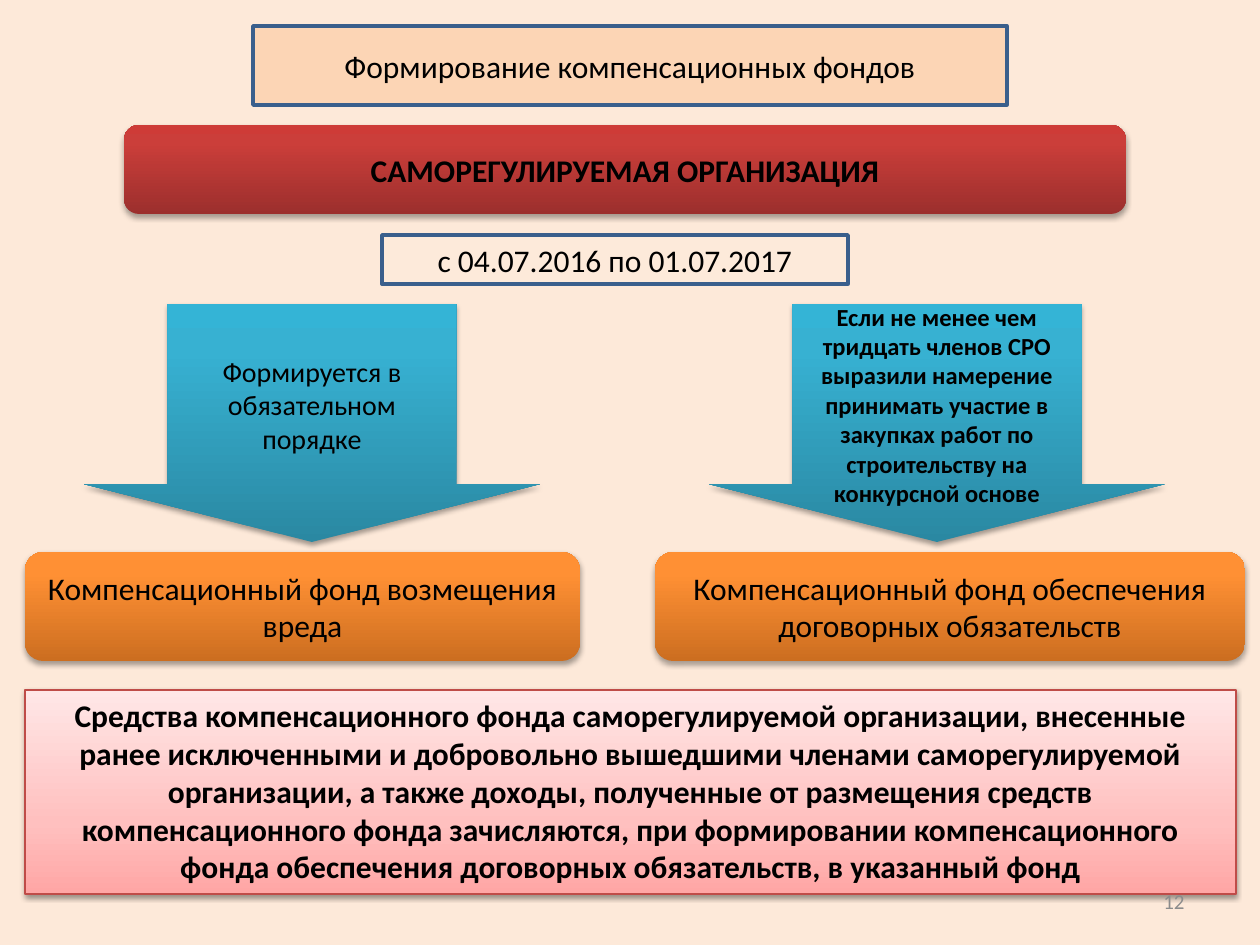
"""Build the slide on how compensation funds are formed."""
from copy import deepcopy
from dataclasses import dataclass
from typing import Optional

from lxml.etree import SubElement
from pptx import Presentation
from pptx.dml.color import RGBColor
from pptx.enum.shapes import MSO_SHAPE
from pptx.enum.text import MSO_ANCHOR, MSO_AUTO_SIZE, PP_ALIGN
from pptx.oxml.ns import qn
from pptx.util import Emu, Pt

Stops = tuple[tuple[int, str], ...]


@dataclass(frozen=True)
class Theme:
    font: str = "Calibri"
    background: str = "FDE9D9"
    text: str = "000000"
    muted: str = "8C8C8C"
    frame: str = "3A5F8C"
    title_fill: str = "FCD5B5"
    period_fill: str = "FDEADA"
    note_line: str = "BF4C48"
    red: Stops = ((0, "9C2F2D"), (80, "CB3E3A"), (100, "CE3B37"))
    teal: Stops = ((0, "2A88A2"), (80, "37B1D2"), (100, "34B4D6"))
    orange: Stops = ((0, "CC6E20"), (80, "FF9034"), (100, "FF9136"))
    pink: Stops = ((0, "FFA6A5"), (35, "FFC0BF"), (100, "FFE7E7"))
    body: int = 18
    arrow: int = 16
    condition: int = 14
    number: int = 12


@dataclass(frozen=True)
class Shadow:
    alpha: int = 35
    blur: float = 3.1
    distance: float = 1.8


@dataclass(frozen=True)
class Block:
    text: str
    box: tuple[int, int, int, int]
    fill: str | Stops
    kind: MSO_SHAPE = MSO_SHAPE.RECTANGLE
    size: int = Theme.body
    bold: bool = False
    line: Optional[str] = None
    line_width: float = 2
    shadow: Optional[Shadow] = None
    adjustments: tuple[float, ...] = ()
    grows: bool = False


THEME = Theme()
ARROW_ADJ = (0.633, 0.243)
ROUND, ARROW = MSO_SHAPE.ROUNDED_RECTANGLE, MSO_SHAPE.DOWN_ARROW

BLOCKS = (
    Block("с 04.07.2016 по 01.07.2017", (382, 235, 466, 49), THEME.period_fill,
          MSO_SHAPE.PENTAGON, line=THEME.frame, adjustments=(0,)),
    Block("Формирование компенсационных фондов", (253, 26, 754, 79),
          THEME.title_fill, line=THEME.frame),
    Block("Компенсационный фонд возмещения вреда", (25, 552, 555, 109),
          THEME.orange, ROUND, shadow=Shadow()),
    Block("Компенсационный фонд обеспечения договорных обязательств",
          (655, 552, 590, 109), THEME.orange, ROUND, shadow=Shadow()),
    Block("САМОРЕГУЛИРУЕМАЯ ОРГАНИЗАЦИЯ", (124, 125, 1002, 89), THEME.red,
          ROUND, bold=True, shadow=Shadow()),
    Block("Формируется в обязательном порядке", (84, 304, 456, 238),
          THEME.teal, ARROW, THEME.arrow, shadow=Shadow(),
          adjustments=ARROW_ADJ),
    Block("Средства компенсационного фонда саморегулируемой организации, "
          "внесенные ранее исключенными и добровольно вышедшими членами "
          "саморегулируемой организации, а также доходы, полученные от "
          "размещения средств компенсационного фонда зачисляются, при "
          "формировании компенсационного фонда обеспечения договорных "
          "обязательств, в указанный фонд", (25, 690, 1211, 204), THEME.pink,
          bold=True, line=THEME.note_line, line_width=0.75,
          shadow=Shadow(38, 3.1, 1.6), grows=True),
    Block("Если не менее чем тридцать членов СРО выразили намерение принимать "
          "участие в закупках работ по строительству на конкурсной основе",
          (709, 304, 456, 238), THEME.teal, ARROW, THEME.condition, bold=True,
          shadow=Shadow(), adjustments=ARROW_ADJ),
)


def px(value: int) -> Emu:
    """Turn pixels into EMU."""
    return Emu(round(value * 914400 / 126))


def rgb(value: str) -> RGBColor:
    """Turn a hex string into a colour."""
    return RGBColor.from_string(value)


def set_gradient(sp, stops: Stops) -> None:
    """Fill a shape with a gradient that runs from bottom to top."""
    sp.fill.gradient()
    sp.fill.gradient_angle = 90
    stop_list = sp._element.spPr.find(f".//{qn('a:gsLst')}")
    while len(stop_list) < len(stops):
        stop_list.append(deepcopy(stop_list[-1]))
    for stop, (position, color) in zip(sp.fill.gradient_stops, stops):
        stop.position = position / 100
        stop.color.rgb = rgb(color)


def set_shadow(sp, shadow: Shadow) -> None:
    """Give a shape a soft shadow that falls downwards."""
    effects = sp._element.spPr.find(qn("a:effectLst"))
    outer = SubElement(effects, qn("a:outerShdw"), blurRad=str(Pt(shadow.blur)),
                       dist=str(Pt(shadow.distance)), dir="5400000",
                       rotWithShape="0")
    color = SubElement(outer, qn("a:srgbClr"), val=THEME.text)
    SubElement(color, qn("a:alpha"), val=str(shadow.alpha * 1000))


def write(sp, text: str, size: int, color: str, bold: bool = False,
          align: PP_ALIGN = PP_ALIGN.CENTER) -> None:
    """Put one wrapped, vertically centred paragraph in a shape."""
    tf = sp.text_frame
    tf.word_wrap = True
    tf.vertical_anchor = MSO_ANCHOR.MIDDLE
    p = tf.paragraphs[0]
    p.text = text
    p.alignment = align
    p.font.name = THEME.font
    p.font.size = Pt(size)
    p.font.bold = bold
    p.font.color.rgb = rgb(color)


def draw_block(s, block: Block) -> None:
    """Draw one labelled block."""
    sp = s.shapes.add_shape(block.kind, *map(px, block.box))
    for index, value in enumerate(block.adjustments):
        sp.adjustments[index] = value
    if isinstance(block.fill, str):
        sp.fill.solid()
        sp.fill.fore_color.rgb = rgb(block.fill)
    else:
        set_gradient(sp, block.fill)
    if block.line:
        sp.line.color.rgb = rgb(block.line)
        sp.line.width = Pt(block.line_width)
    else:
        sp.line.fill.background()
    sp.shadow.inherit = False
    if block.shadow:
        set_shadow(sp, block.shadow)
    write(sp, block.text, block.size, THEME.text, block.bold)
    if block.grows:
        sp.text_frame.vertical_anchor = MSO_ANCHOR.TOP
        sp.text_frame.auto_size = MSO_AUTO_SIZE.SHAPE_TO_FIT_TEXT


def main() -> None:
    """Build and save the slide."""
    prs = Presentation()
    prs.slide_width, prs.slide_height = px(1260), px(945)
    s = prs.slides.add_slide(prs.slide_layouts[6])
    s.background.fill.solid()
    s.background.fill.fore_color.rgb = rgb(THEME.background)
    for block in BLOCKS:
        draw_block(s, block)
    number = s.shapes.add_textbox(px(903), px(876), px(294), px(50))
    write(number, "12", THEME.number, THEME.muted, align=PP_ALIGN.RIGHT)
    prs.save("out.pptx")


if __name__ == "__main__":
    main()
